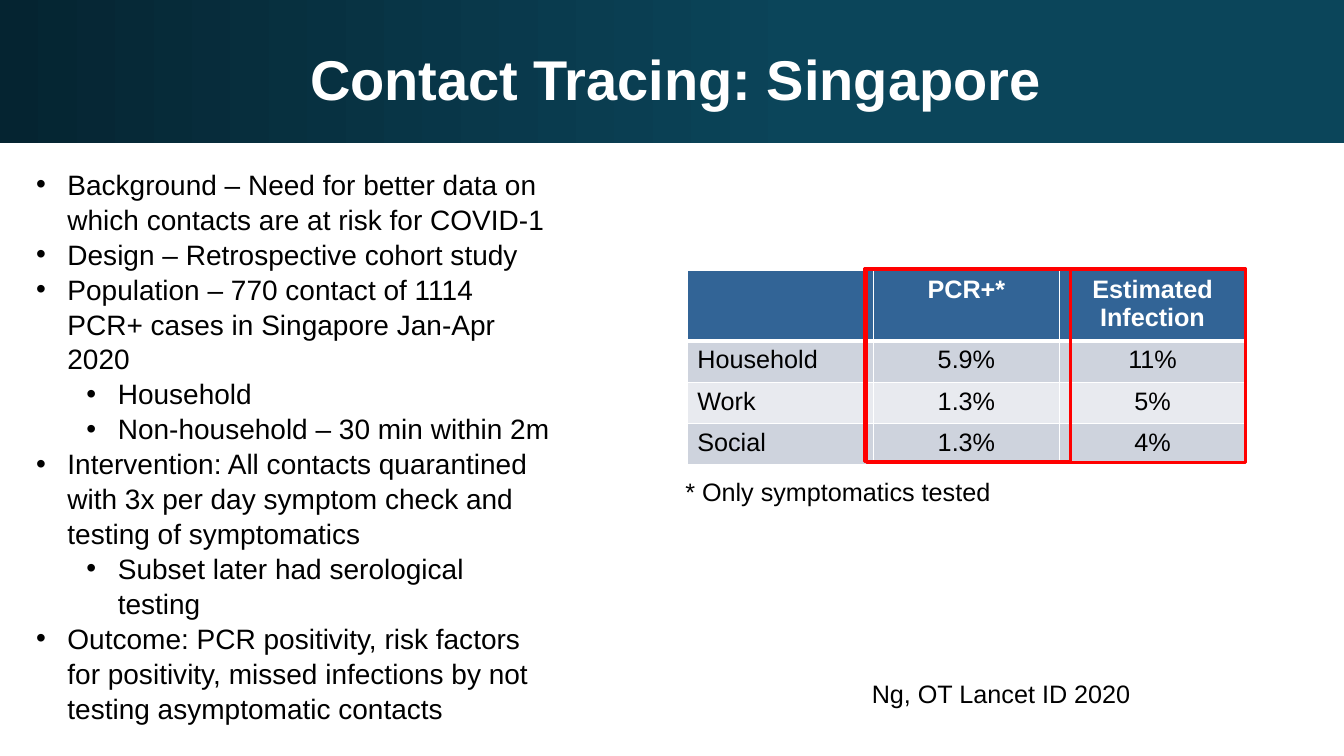
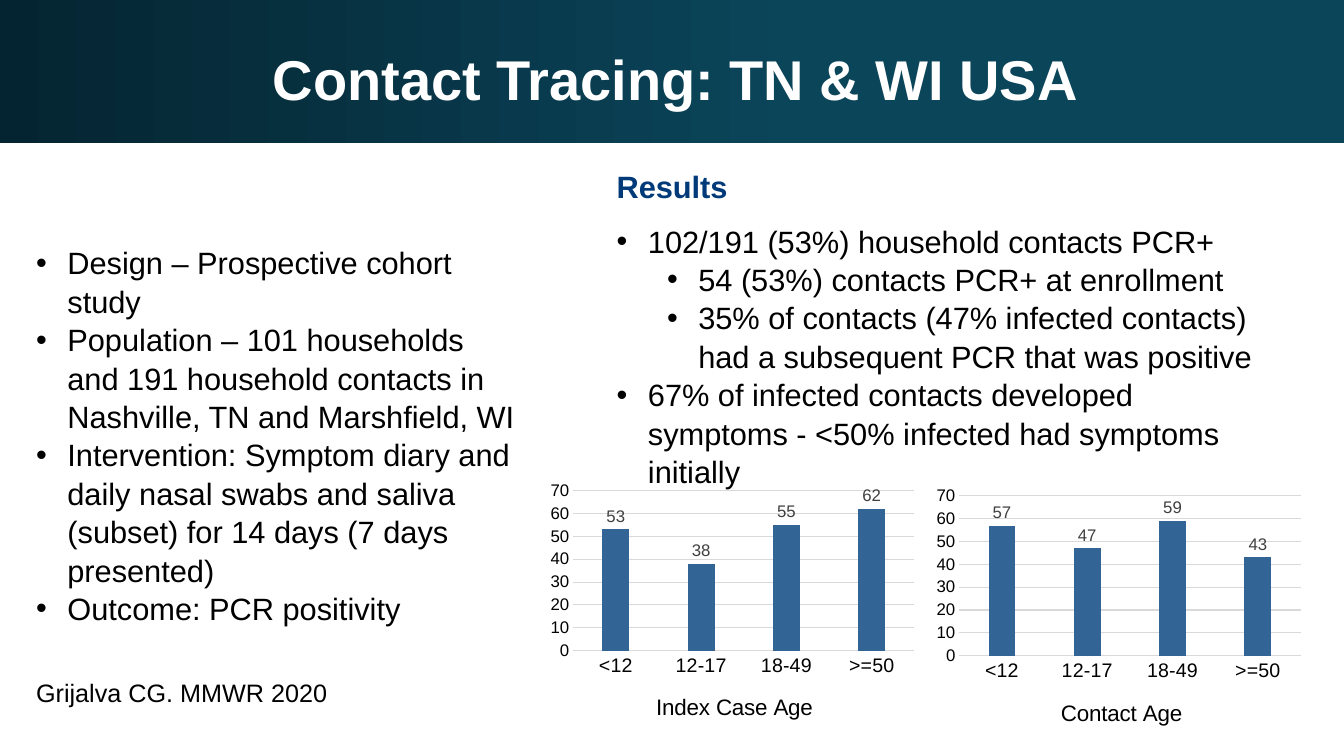
"""Builds two slides on contact tracing studies."""
from pptx import Presentation
from pptx import util as u
from pptx.chart.data import CategoryChartData
from pptx.dml.color import RGBColor
from pptx.enum import chart as ch, shapes, text
from pptx.oxml.ns import qn
from pptx.oxml.xmlchemy import OxmlElement

NIGHT = RGBColor(0x05, 0x24, 0x31)
TEAL = RGBColor(0x0B, 0x45, 0x5A)
NAVY = RGBColor(0x00, 0x3A, 0x78)
BLUE = RGBColor(0x32, 0x64, 0x96)
MIST = RGBColor(0xCE, 0xD3, 0xDD)
PALE = RGBColor(0xE8, 0xEA, 0xEF)
GRID = RGBColor(0xD9, 0xD9, 0xD9)
GRAY = RGBColor(0x40, 0x40, 0x40)
RED = RGBColor(0xFF, 0x00, 0x00)
BLACK = RGBColor(0, 0, 0)
WHITE = RGBColor(0xFF, 0xFF, 0xFF)
FONT = "Arial"
WIDE, HIGH = 33.87, 19.05
AGES = ["<12", "12-17", "18-49", ">=50"]


def node(root, tag, **attrs):
    item = OxmlElement(tag)
    for key, val in attrs.items():
        item.set(key, str(val))
    root.append(item)
    return item


def style(font, size, color=BLACK, bold=False):
    font.name, font.size, font.bold = FONT, u.Pt(size), bold
    font.color.rgb = color


def lay_out(root, spot, **sizes):
    for old in root.findall(qn("c:layout")):
        root.remove(old)
    base = OxmlElement("c:layout")
    man = node(base, "c:manualLayout")
    if "w" in sizes:
        node(man, "c:layoutTarget", val="inner")
    for mode in ("c:xMode", "c:yMode"):
        node(man, mode, val="edge")
    for key, val in sizes.items():
        node(man, "c:" + key, val=val)
    root.insert(spot, base)


class Deck:
    """Holds the style and the current slide."""

    def __init__(self):
        self.prs = Presentation()
        self.prs.slide_width, self.prs.slide_height = u.Cm(WIDE), u.Cm(HIGH)
        self.slide = None

    def start(self, title):
        self.slide = self.prs.slides.add_slide(self.prs.slide_layouts[6])
        band = self.rect(0, 0, WIDE, 3.6)
        band.line.fill.background()
        band.fill.gradient()
        band.fill.gradient_angle = 0
        stops = band.fill.gradient_stops
        for stop, color, pos in zip(stops, (NIGHT, TEAL), (0, 0.6)):
            stop.color.rgb, stop.position = color, pos
        frame = self.label(title, 0.66, 0.89, 32.72, 2.54, 40, WHITE, True)
        frame.vertical_anchor = text.MSO_ANCHOR.MIDDLE
        frame.margin_bottom = u.Cm(0.53)
        frame.paragraphs[0].alignment = text.PP_ALIGN.CENTER

    def rect(self, *box):
        shape = self.slide.shapes.add_shape(
            shapes.MSO_SHAPE.RECTANGLE, *map(u.Cm, box))
        shape.shadow.inherit = False
        return shape

    def frame(self, *box):
        shape = self.slide.shapes.add_textbox(*map(u.Cm, box))
        shape.text_frame.word_wrap = True
        return shape.text_frame

    def label(self, words, x, y, w=10.49, h=1.02, size=18,
              color=BLACK, bold=False):
        frame = self.frame(x, y, w, h)
        frame.text = words
        style(frame.paragraphs[0].runs[0].font, size, color, bold)
        return frame

    def bullets(self, items, box, size):
        frame = self.frame(*box)
        for num, (level, words) in enumerate(items):
            para = frame.add_paragraph() if num else frame.paragraphs[0]
            para.text, para.level = words, level
            para.line_spacing = 1.04
            props = para._p.get_or_add_pPr()
            props.set("marL", str(u.Cm(0.79 + 1.27 * level)))
            props.set("indent", str(u.Cm(-0.79)))
            node(props, "a:buFont", typeface=FONT)
            node(props, "a:buChar", char="•")
            style(para.runs[0].font, size)

    def border(self, cell, **widths):
        props = cell._tc.get_or_add_tcPr()
        for side, width in widths.items():
            line = node(props, "a:ln" + side, w=u.Pt(width))
            node(node(line, "a:solidFill"), "a:srgbClr", val=WHITE)

    def table(self, rows, x, y, wide, highs):
        cols = len(rows[0])
        grid = self.slide.shapes.add_table(
            len(rows), cols, u.Cm(x), u.Cm(y),
            u.Cm(wide * cols), u.Cm(sum(highs))).table
        for col in grid.columns:
            col.width = u.Cm(wide)
        for r, (row, high) in enumerate(zip(rows, highs)):
            grid.rows[r].height = u.Cm(high)
            fill = (MIST if r % 2 else PALE) if r else BLUE
            for c, words in enumerate(row):
                cell = grid.cell(r, c)
                self.border(cell, L=1, R=1, T=3 if r == 1 else 1,
                            B=1 if r else 3)
                cell.fill.solid()
                cell.fill.fore_color.rgb = fill
                cell.text = words
                para = cell.text_frame.paragraphs[0]
                if c:
                    para.alignment = text.PP_ALIGN.CENTER
                for run in para.runs:
                    style(run.font, 18, BLACK if r else WHITE, not r)

    def outline(self, *box):
        shape = self.rect(*box)
        shape.fill.background()
        shape.line.color.rgb, shape.line.width = RED, u.Pt(2.25)

    def bars(self, name, vals, x, y, left):
        data = CategoryChartData()
        data.categories = AGES
        data.add_series("Series 1", vals)
        chart = self.slide.shapes.add_chart(
            ch.XL_CHART_TYPE.COLUMN_CLUSTERED,
            *map(u.Cm, (x, y, 9.45, 6.5)), data).chart
        chart.has_legend = chart.has_title = False
        style(chart.font, 10)
        plot = chart.plots[0]
        plot.gap_width, plot.overlap = 219, -27
        plot.vary_by_categories = False
        fill = plot.series[0].format.fill
        fill.solid()
        fill.fore_color.rgb = BLUE
        plot.has_data_labels = True
        tags = plot.data_labels
        tags.show_value = True
        tags.position = ch.XL_LABEL_POSITION.OUTSIDE_END
        style(tags.font, 12, GRAY)
        cat, val = chart.category_axis, chart.value_axis
        for axis, size in ((cat, 14), (val, 12)):
            axis.major_tick_mark = ch.XL_TICK_MARK.NONE
            axis.minor_tick_mark = ch.XL_TICK_MARK.NONE
            style(axis.tick_labels.font, size)
        val.minimum_scale, val.maximum_scale, val.major_unit = 0, 70, 10
        val.format.line.fill.background()
        for line in (cat.format.line, val.major_gridlines.format.line):
            line.color.rgb, line.width = GRID, u.Pt(0.75)
        title = cat.axis_title
        title.text_frame.text = name
        style(title.text_frame.paragraphs[0].runs[0].font, 16)
        lay_out(title.element, 1, x=left, y=0.82)
        area = chart.element.find(".//" + qn("c:plotArea"))
        lay_out(area, 0, x=0.08, y=0.05, w=0.91, h=0.62)


def trace_asia(deck):
    deck.start("Contact Tracing: Singapore")
    deck.bullets([
        (0, "Background – Need for better data on which contacts are at "
            "risk for COVID-1"),
        (0, "Design – Retrospective cohort study"),
        (0, "Population – 770 contact of 1114 PCR+ cases in Singapore "
            "Jan-Apr 2020"),
        (1, "Household"),
        (1, "Non-household – 30 min within 2m"),
        (0, "Intervention: All contacts quarantined with 3x per day symptom "
            "check and testing of symptomatics"),
        (1, "Subset later had serological testing"),
        (0, "Outcome: PCR positivity, risk factors for positivity, missed "
            "infections by not testing asymptomatic contacts"),
    ], (0.66, 4.06, 13.49, 13.94), 20)
    deck.label("Ng, OT Lancet ID 2020", 21.72, 16.97)
    deck.table([
        ("", "PCR+*", "Estimated Infection"),
        ("Household", "5.9%", "11%"),
        ("Work", "1.3%", "5%"),
        ("Social", "1.3%", "4%"),
    ], 17.32, 6.81, 4.69, (1.75, 1.04, 1.04, 1.04))
    deck.label("* Only symptomatics tested", 17.02, 11.89)
    deck.outline(21.79, 6.76, 5.18, 4.88)
    deck.outline(21.84, 6.78, 9.55, 4.88)


def trace_usa(deck):
    deck.start("Contact Tracing: TN & WI USA")
    deck.bullets([
        (0, "Design – Prospective cohort study"),
        (0, "Population – 101 households and 191 household contacts in "
            "Nashville, TN and Marshfield, WI"),
        (0, "Intervention: Symptom diary and daily nasal swabs and saliva "
            "(subset) for 14 days (7 days presented)"),
        (0, "Outcome: PCR positivity"),
    ], (0.66, 5.99, 12.7, 9.65), 22)
    deck.label("Grijalva CG. MMWR 2020", 0.66, 16.94)
    deck.bullets([
        (0, "102/191 (53%) household contacts PCR+"),
        (1, "54 (53%) contacts PCR+ at enrollment"),
        (1, "35% of contacts (47% infected contacts) had a subsequent PCR "
            "that was positive"),
        (0, "67% of infected contacts developed symptoms - <50% infected "
            "had symptoms initially"),
    ], (15.29, 5.44, 16.92, 6.83), 22)
    deck.label("Results", 15.29, 4.11, 8.56, 1.19, 22, NAVY, True)
    deck.bars("Index Case Age", (53, 38, 55, 62), 13.69, 12.04, 0.29)
    deck.bars("Contact Age", (57, 47, 59, 43), 23.42, 12.17, 0.34)


def main():
    deck = Deck()
    trace_asia(deck)
    trace_usa(deck)
    deck.prs.save("out.pptx")


if __name__ == "__main__":
    main()
